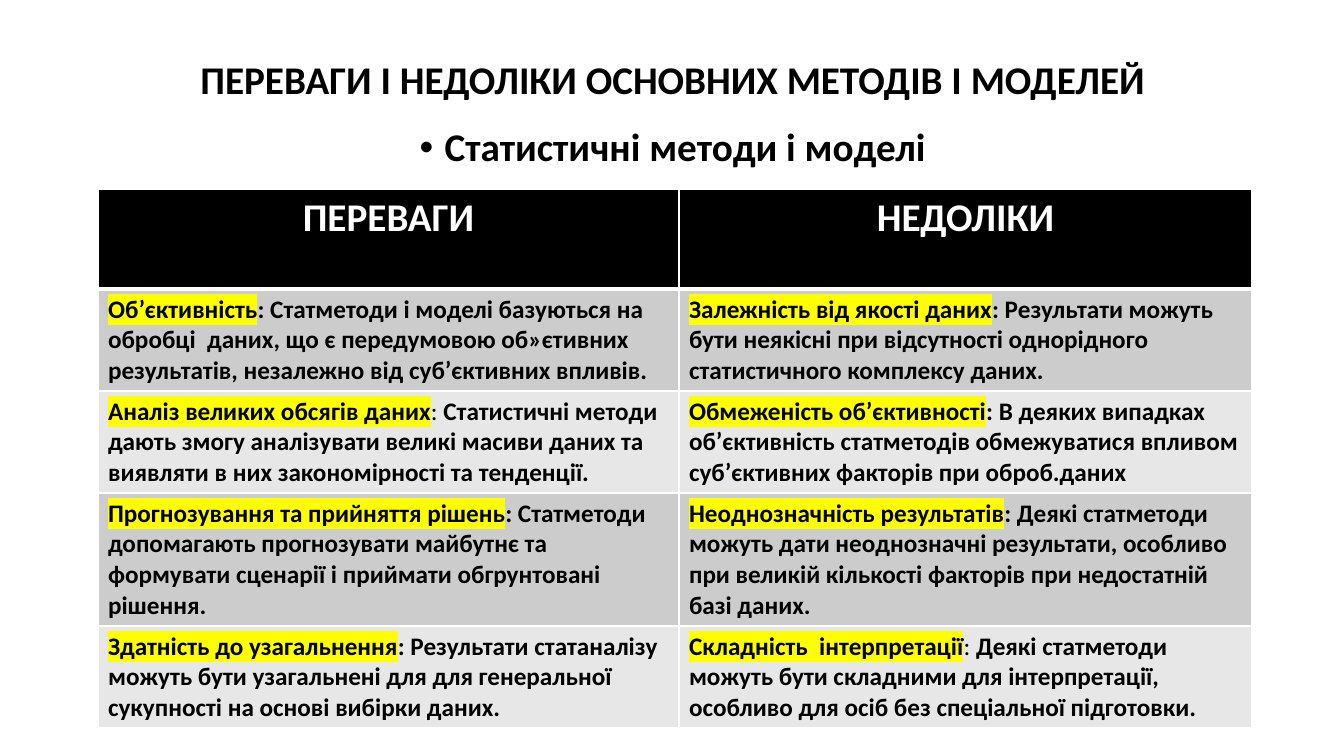
from dataclasses import dataclass

from lxml.etree import SubElement
from pptx import Presentation
from pptx.dml.color import RGBColor
from pptx.enum.text import MSO_ANCHOR as Anchor, PP_ALIGN as Align
from pptx.oxml import parse_xml
from pptx.oxml.ns import nsdecls, qn
from pptx.util import Emu, Pt

SLIDE_WIDTH, SLIDE_HEIGHT = 1344, 756
EMU_PER_PX = 12192000 / SLIDE_WIDTH
FONT = "Calibri"
BLACK, WHITE, YELLOW = "000000", "FFFFFF", "FFFF00"
BANDS = ("CCCCCC", "E7E7E7")
COLUMN_WIDTHS = (581, 573)
ROW_HEIGHTS = (100, 102, 102, 133, 102)
HEADINGS = ("ПЕРЕВАГИ", "НЕДОЛІКИ")


@dataclass(frozen=True)
class Point:
    term: str
    explanation: str
    bold_colon: bool = True


COMPARISON = (
    (
        Point("Об’єктивність", "Статметоди і моделі базуються на обробці  даних, що є передумовою об»єтивних результатів, незалежно від суб’єктивних впливів."),
        Point("Залежність від якості даних", "Результати можуть бути неякісні при відсутності однорідного статистичного комплексу даних."),
    ),
    (
        Point("Аналіз великих обсягів даних", "Статистичні методи дають змогу аналізyвати великі масиви даних та виявляти в них закономірності та тенденції.", False),
        Point("Обмеженість об’єктивності", "В деяких випадках об’єктивність статметодів обмежуватися впливом суб’єктивних факторів при оброб.даних"),
    ),
    (
        Point("Прогнозування та прийняття рішень", "Статметоди допомагають прогнозувати майбутнє та формувати сценарії і приймати обгрунтовані рішення."),
        Point("Неоднозначність результатів", "Деякі статметоди можуть дати неоднозначні результати, особливо при великій кількості факторів при недостатній базі даних."),
    ),
    (
        Point("Здатність до узагальнення", "Результати статаналізу можуть бути узагальнені для для генеральної сукупності на основі вибірки даних."),
        Point("Складність  інтерпретації", "Деякі статметоди можуть бути складними для інтерпретації, особливо для осіб без спеціальної підготовки.", False),
    ),
)


def px(length: int) -> Emu:
    return Emu(round(length * EMU_PER_PX))


def rgb(color: str) -> RGBColor:
    return RGBColor.from_string(color)


def add_text(paragraph, text: str, *, size: int = 18, color: str = BLACK,
             bold: bool = True, highlight: str | None = None) -> None:
    run = paragraph.add_run()
    run.text = text
    run.font.size = Pt(size)
    run.font.bold = bold
    run.font.color.rgb = rgb(color)
    if highlight:
        marker = parse_xml(f'<a:highlight {nsdecls("a")}><a:srgbClr val="{highlight}"/></a:highlight>')
        run._r.get_or_add_rPr().find(qn("a:solidFill")).addnext(marker)
    run.font.name = FONT


def add_heading(slide, text: str, top: int, height: int, *,
                anchor: Anchor = Anchor.TOP, bullet: bool = False) -> None:
    box = slide.shapes.add_textbox(px(93), px(top), px(1159), px(height))
    frame = box.text_frame
    frame.word_wrap = True
    frame.vertical_anchor = anchor
    paragraph = frame.paragraphs[0]
    paragraph.alignment = Align.CENTER
    paragraph.line_spacing = 0.9
    if bullet:
        properties = paragraph._p.get_or_add_pPr()
        properties.set("marL", str(px(25)))
        properties.set("indent", str(-px(25)))
        SubElement(properties, qn("a:buFont"), typeface="Arial")
        SubElement(properties, qn("a:buChar"), char="•")
    add_text(paragraph, text, size=28)


def style_cell(cell, fill: str, top_width: int, bottom_width: int) -> None:
    cell.fill.solid()
    cell.fill.fore_color.rgb = rgb(fill)
    properties = cell._tc.get_or_add_tcPr()
    widths = {"L": 1, "R": 1, "T": top_width, "B": bottom_width}
    for position, (side, width) in enumerate(widths.items()):
        properties.insert(position, parse_xml(
            f'<a:ln{side} {nsdecls("a")} w="{Pt(width)}"><a:solidFill>'
            f'<a:srgbClr val="{WHITE}"/></a:solidFill></a:ln{side}>'))


def add_comparison(slide) -> None:
    table = slide.shapes.add_table(
        len(ROW_HEIGHTS), len(COLUMN_WIDTHS), px(98), px(189),
        px(sum(COLUMN_WIDTHS)), px(sum(ROW_HEIGHTS))).table
    for column, width in zip(table.columns, COLUMN_WIDTHS):
        column.width = px(width)
    for row, height in zip(table.rows, ROW_HEIGHTS):
        row.height = px(height)

    for column, heading in enumerate(HEADINGS):
        cell = table.cell(0, column)
        style_cell(cell, BLACK, 1, 3)
        paragraph = cell.text_frame.paragraphs[0]
        paragraph.alignment = Align.CENTER
        add_text(paragraph, heading, size=28, color=WHITE)

    for row, points in enumerate(COMPARISON, start=1):
        for column, point in enumerate(points):
            cell = table.cell(row, column)
            style_cell(cell, BANDS[(row - 1) % 2], 3 if row == 1 else 1, 1)
            paragraph = cell.text_frame.paragraphs[0]
            add_text(paragraph, point.term, highlight=YELLOW)
            add_text(paragraph, ": ", bold=point.bold_colon)
            add_text(paragraph, point.explanation)


def main() -> None:
    presentation = Presentation()
    presentation.slide_width = px(SLIDE_WIDTH)
    presentation.slide_height = px(SLIDE_HEIGHT)
    slide = presentation.slides.add_slide(presentation.slide_layouts[6])
    add_heading(slide, "ПЕРЕВАГИ І НЕДОЛІКИ ОСНОВНИХ МЕТОДІВ І МОДЕЛЕЙ", 40, 83, anchor=Anchor.MIDDLE)
    add_heading(slide, "Статистичні методи і моделі", 123, 62, bullet=True)
    add_comparison(slide)
    presentation.save("out.pptx")


if __name__ == "__main__":
    main()
